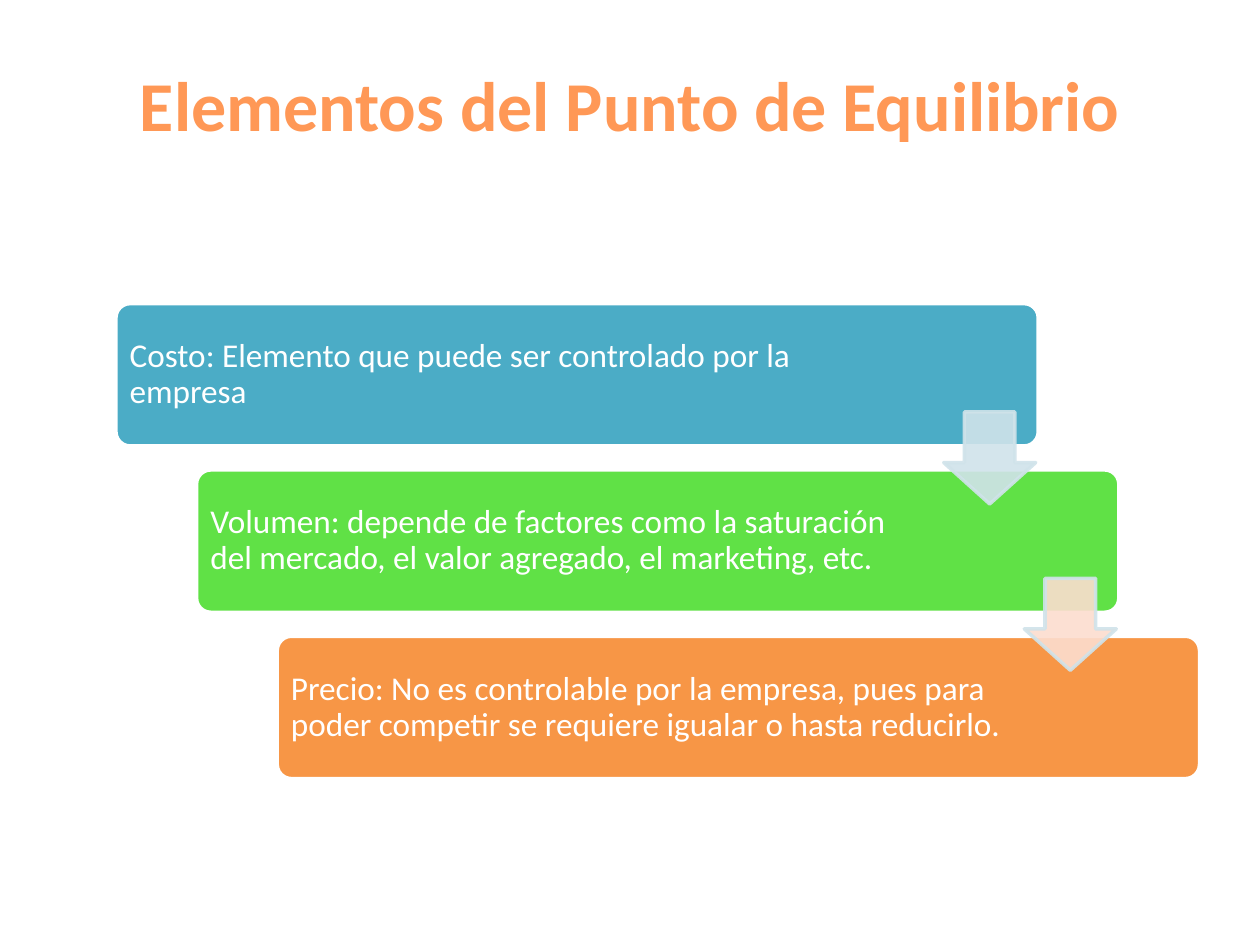
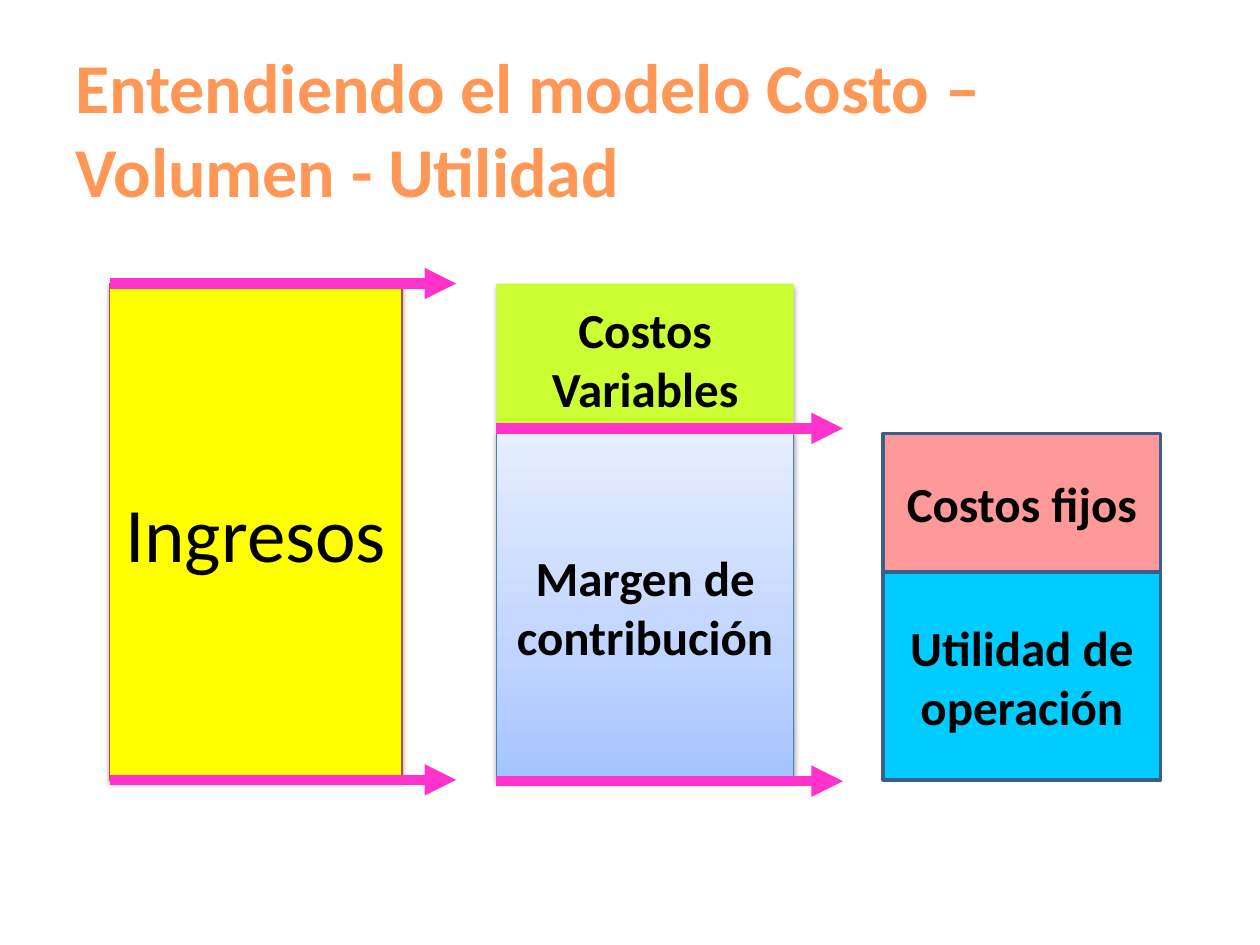
from lxml.etree import SubElement
from pptx import Presentation
from pptx.dml.color import RGBColor
from pptx.enum.shapes import MSO_CONNECTOR, MSO_SHAPE
from pptx.enum.text import MSO_ANCHOR, PP_ALIGN
from pptx.oxml.ns import qn
from pptx.util import Inches, Pt

FONT = "Calibri"
TITLE = RGBColor(0xFF, 0x98, 0x56)
WHITE = RGBColor(0xFF, 0xFF, 0xFF)
BLACK = RGBColor(0, 0, 0)
TEAL = RGBColor(0x4B, 0xAC, 0xC6)
GREEN = RGBColor(0x60, 0xE1, 0x46)
ORANGE = RGBColor(0xF7, 0x96, 0x46)
PALE_BLUE = RGBColor(0xD0, 0xE3, 0xEA)
PALE_PEACH = RGBColor(0xFC, 0xDD, 0xCF)
YELLOW = RGBColor(0xFF, 0xFF, 0x00)
LIME = RGBColor(0xCC, 0xFF, 0x33)
PINK = RGBColor(0xFF, 0x99, 0x99)
CYAN = RGBColor(0x00, 0xCC, 0xFF)
MAGENTA = RGBColor(0xFF, 0x33, 0xCC)
RED_EDGE = RGBColor(0xBF, 0x4C, 0x48)
BLUE_EDGE = RGBColor(0x4B, 0x7E, 0xBC)
NAVY_EDGE = RGBColor(0x3A, 0x5F, 0x8C)
MARGIN_STOPS = (
    (0, RGBColor(0xA4, 0xC4, 0xFF)),
    (35, RGBColor(0xBF, 0xD4, 0xFF)),
    (100, RGBColor(0xE6, 0xEE, 0xFF)),
)

STEP_LEFT, STEP_TOP = 0.92, 2.41
STEP_DX, STEP_DY = 0.64, 1.32
STEP_W, STEP_H = 7.32, 1.13
STEP_PAD = 0.03
ARROW_SIZE = 0.73

BAR_LEFT, BAR_PITCH = 0.87, 3.07
BAR_TOP, BAR_SPLIT, BAR_PROFIT, BAR_BASE = 2.25, 3.44, 4.54, 6.19
FLOW_LENGTH = 2.75


def inches(*values):
    return [Inches(v) for v in values]


def write(tf, text, size, color, bold=False, align=PP_ALIGN.LEFT):
    tf.word_wrap = True
    p = tf.paragraphs[0]
    p.alignment = align
    r = p.add_run()
    r.text = text
    r.font.name = FONT
    r.font.size = Pt(size)
    r.font.bold = bold
    r.font.color.rgb = color
    return p


def add_title(s, text, top, align=PP_ALIGN.LEFT):
    tf = s.shapes.add_textbox(*inches(0.5, top, 9, 1.25)).text_frame
    write(tf, text, 40, TITLE, True, align)


def add_box(s, kind, box, fill, edge=None, width=2):
    sp = s.shapes.add_shape(kind, *inches(*box))
    sp.shadow.inherit = False
    sp.fill.solid()
    sp.fill.fore_color.rgb = fill
    if edge is None:
        sp.line.fill.background()
    else:
        sp.line.color.rgb = edge
        sp.line.width = Pt(width)
    return sp


def add_step(s, row, text, fill, text_w):
    left, top = STEP_LEFT + row * STEP_DX, STEP_TOP + row * STEP_DY
    sp = add_box(s, MSO_SHAPE.ROUNDED_RECTANGLE,
                 (left, top, STEP_W, STEP_H), fill, WHITE)
    sp.adjustments[0] = 0.1
    tf = s.shapes.add_textbox(*inches(
        left + STEP_PAD, top + STEP_PAD, text_w, STEP_H - 2 * STEP_PAD)).text_frame
    tf.margin_left = tf.margin_right = tf.margin_top = tf.margin_bottom = Inches(0.08)
    tf.vertical_anchor = MSO_ANCHOR.MIDDLE
    write(tf, text, 19, WHITE).line_spacing = 0.9


def add_step_arrow(s, row, fill):
    left, top = 7.49 + row * STEP_DX, 3.27 + row * STEP_DY
    sp = add_box(s, MSO_SHAPE.DOWN_ARROW,
                 (left, top, ARROW_SIZE, ARROW_SIZE), fill, PALE_BLUE)
    sp.adjustments[0], sp.adjustments[1] = 0.55, 0.45
    for color in sp._element.spPr.iter(qn("a:srgbClr")):
        SubElement(color, qn("a:alpha"), val="90000")


def add_shadow(sp, opacity, distance):
    effects = sp._element.spPr.find(qn("a:effectLst"))
    shadow = SubElement(effects, qn("a:outerShdw"), blurRad=str(Pt(3.1)),
                        dist=str(Pt(distance)), dir="5400000", rotWithShape="0")
    color = SubElement(shadow, qn("a:srgbClr"), val=str(BLACK))
    SubElement(color, qn("a:alpha"), val=str(opacity * 1000))


def set_gradient(sp, stops):
    sp.fill.gradient()
    sp.fill.gradient_angle = 90
    stop_list = next(sp._element.spPr.iter(qn("a:gsLst")))
    for old in list(stop_list):
        stop_list.remove(old)
    for position, color in stops:
        gs = SubElement(stop_list, qn("a:gs"), pos=str(position * 1000))
        SubElement(gs, qn("a:srgbClr"), val=str(color))


def add_bar(s, col, top, bottom, width, text, fill, edge=None, edge_w=2,
            size=28, bold=True):
    left = BAR_LEFT + col * BAR_PITCH
    sp = add_box(s, MSO_SHAPE.RECTANGLE, (left, top, width, bottom - top),
                 fill, edge, edge_w)
    sp.text_frame.vertical_anchor = MSO_ANCHOR.MIDDLE
    write(sp.text_frame, text, size, BLACK, bold, PP_ALIGN.CENTER)
    return sp


def add_flow(s, col, y):
    left = BAR_LEFT + col * BAR_PITCH
    line = s.shapes.add_connector(MSO_CONNECTOR.STRAIGHT,
                                  *inches(left, y, left + FLOW_LENGTH, y))
    line.line.color.rgb = MAGENTA
    line.line.width = Pt(6)
    SubElement(line.line._get_or_add_ln(), qn("a:tailEnd"), type="triangle")
    SubElement(line._element.spPr, qn("a:effectLst"))


def build_elements(s):
    add_title(s, "Elementos del Punto de Equilibrio", 0.44, PP_ALIGN.CENTER)
    steps = (
        ("Costo: Elemento que puede ser controlado por la empresa", TEAL, 6.1),
        ("Volumen: depende de factores como la saturación del mercado, "
         "el valor agregado, el marketing, etc.", GREEN, 5.87),
        ("Precio: No es controlable por la empresa, pues para poder competir "
         "se requiere igualar o hasta reducirlo.", ORANGE, 5.87),
    )
    for row, step in enumerate(steps):
        add_step(s, row, *step)
    for row, fill in enumerate((PALE_BLUE, PALE_PEACH)):
        add_step_arrow(s, row, fill)


def build_model(s):
    add_title(s, "Entendiendo el modelo Costo – Volumen - Utilidad", 0.3)
    income = add_bar(s, 0, BAR_TOP, BAR_BASE, 2.32, "Ingresos", YELLOW,
                     RED_EDGE, 0.75, 44, False)
    variable = add_bar(s, 1, BAR_TOP, BAR_SPLIT, 2.36, "Costos Variables", LIME)
    margin = add_bar(s, 1, BAR_SPLIT, BAR_BASE, 2.36, "Margen de contribución",
                     CYAN, BLUE_EDGE, 0.75)
    set_gradient(margin, MARGIN_STOPS)
    add_shadow(income, 38, 1.6)
    add_shadow(variable, 35, 1.8)
    add_shadow(margin, 38, 1.6)
    add_bar(s, 2, BAR_SPLIT, BAR_PROFIT, 2.2, "Costos fijos", PINK, NAVY_EDGE)
    add_bar(s, 2, BAR_PROFIT, BAR_BASE, 2.2, "Utilidad de operación", CYAN, NAVY_EDGE)
    for col, y in ((0, BAR_TOP), (0, BAR_BASE), (1, 3.4), (1, 6.2)):
        add_flow(s, col, y)


def main():
    prs = Presentation()
    prs.slide_width, prs.slide_height = inches(10, 7.5)
    for build in (build_elements, build_model):
        build(prs.slides.add_slide(prs.slide_layouts[6]))
    prs.save("out.pptx")


if __name__ == "__main__":
    main()
